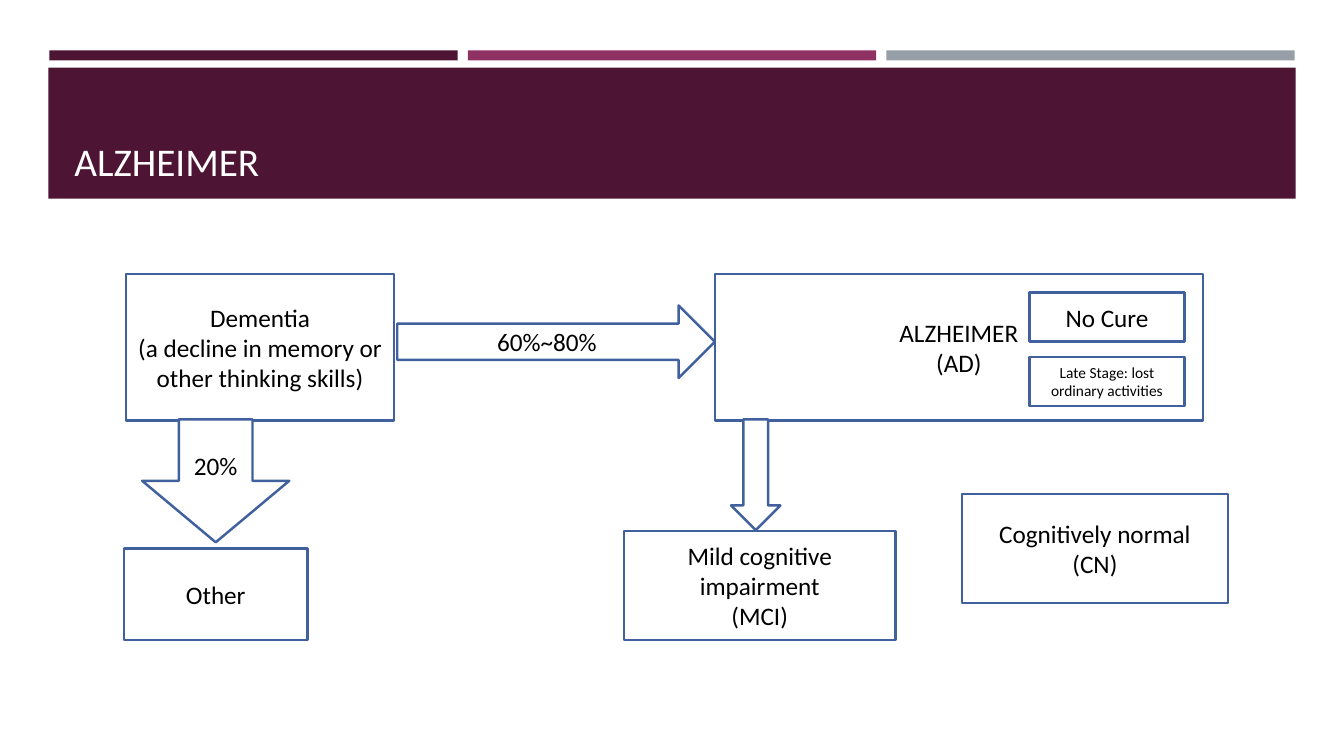
from pptx import Presentation
from pptx.dml.color import RGBColor
from pptx.enum.shapes import MSO_SHAPE as SHAPE
from pptx.enum.text import MSO_ANCHOR as ANCHOR, PP_ALIGN as ALIGN
from pptx.util import Inches, Pt

FONT = "Calibri"
PLUM, MAGENTA, GREY = "4D1434", "903163", "969FA7"
WHITE, BLACK, OUTLINE = "FFFFFF", "000000", "40619D"


def color(value):
    return RGBColor.from_string(value)


def write(sp, text, size=18, fill=BLACK, align=ALIGN.CENTER, anchor=ANCHOR.MIDDLE):
    """Put text into a shape, one paragraph per line."""
    tf = sp.text_frame
    tf.word_wrap = True
    tf.vertical_anchor = anchor
    for i, line in enumerate(text.split("\n")):
        p = tf.add_paragraph() if i else tf.paragraphs[0]
        p.alignment = align
        r = p.add_run()
        r.text = line
        r.font.name = FONT
        r.font.size = Pt(size)
        r.font.color.rgb = color(fill)


def add_block(slide, box, fill=WHITE, line=None, kind=SHAPE.RECTANGLE):
    sp = slide.shapes.add_shape(kind, *map(Inches, box))
    sp.shadow.inherit = False
    sp.fill.solid()
    sp.fill.fore_color.rgb = color(fill)
    if line:
        sp.line.color.rgb = color(line)
        sp.line.width = Pt(1.75)
    else:
        sp.line.fill.background()
    return sp


def add_node(slide, box, text="", size=18, kind=SHAPE.RECTANGLE):
    """Add an outlined box or block arrow of the diagram."""
    sp = add_block(slide, box, line=OUTLINE, kind=kind)
    if text:
        write(sp, text, size)


def add_header(slide, title):
    for i, fill in enumerate((PLUM, MAGENTA, GREY)):
        add_block(slide, (0.49 + 4.15 * i, 0.5, 4.05, 0.1), fill)
    add_block(slide, (0.48, 0.67, 12.37, 1.3), PLUM)
    sp = slide.shapes.add_textbox(*map(Inches, (0.64, 0.77, 12.06, 1.11)))
    write(sp, title, size=28, fill=WHITE, align=ALIGN.LEFT, anchor=ANCHOR.BOTTOM)


def main():
    prs = Presentation()
    prs.slide_width, prs.slide_height = Inches(13.33), Inches(7.5)
    slide = prs.slides.add_slide(prs.slide_layouts[6])

    add_header(slide, "ALZHEIMER")

    add_node(slide, (1.25, 2.72, 2.66, 1.45),
             "Dementia\n(a decline in memory or other thinking skills)")
    add_node(slide, (3.94, 3.03, 3.15, 0.72), "60%~80%", kind=SHAPE.RIGHT_ARROW)
    add_node(slide, (7.09, 2.72, 4.84, 1.45), "ALZHEIMER\n(AD)")
    add_node(slide, (1.41, 4.16, 1.46, 1.22), "20%", kind=SHAPE.DOWN_ARROW)
    add_node(slide, (1.23, 5.44, 1.82, 0.91), "Other")
    add_node(slide, (7.25, 4.16, 0.49, 1.1), kind=SHAPE.DOWN_ARROW)
    add_node(slide, (6.19, 5.27, 2.69, 1.08), "Mild cognitive impairment\n(MCI)")
    add_node(slide, (9.54, 4.9, 2.64, 1.08), "Cognitively normal\n(CN)")
    add_node(slide, (10.21, 2.9, 1.54, 0.49), "No Cure")
    add_node(slide, (10.21, 3.54, 1.54, 0.49),
             "Late Stage: lost ordinary activities", size=11)

    prs.save("out.pptx")


if __name__ == "__main__":
    main()
